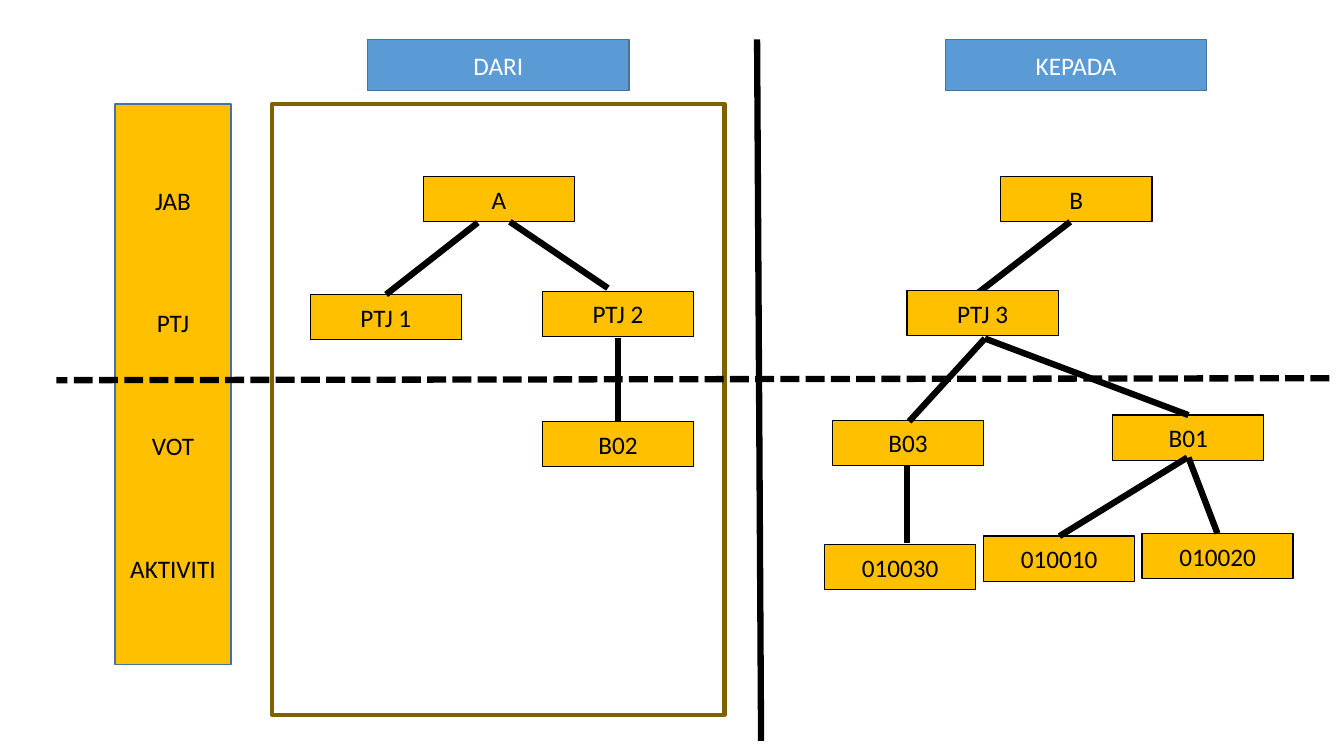
from typing import NamedTuple

from lxml import etree
from pptx import Presentation
from pptx.dml.color import RGBColor
from pptx.enum.dml import MSO_LINE
from pptx.enum.shapes import MSO_CONNECTOR, MSO_SHAPE
from pptx.enum.text import MSO_ANCHOR, PP_ALIGN
from pptx.oxml.ns import qn
from pptx.util import Cm, Pt

RECT = MSO_SHAPE.RECTANGLE
STRAIGHT = MSO_CONNECTOR.STRAIGHT
DASH = MSO_LINE.SQUARE_DOT
MIDDLE = MSO_ANCHOR.MIDDLE
CENTER = PP_ALIGN.CENTER

BLACK = RGBColor(0x00, 0x00, 0x00)
WHITE = RGBColor(0xFF, 0xFF, 0xFF)
GOLD = RGBColor(0xFF, 0xC0, 0x00)
BROWN = RGBColor(0x80, 0x60, 0x00)
BLUE = RGBColor(0x5B, 0x9B, 0xD5)
DARK_BLUE = RGBColor(0x43, 0x73, 0x9E)

FONT = "Calibri"
FONT_SIZE = Pt(18)
LEVEL_GAP = Pt(66)
NODE_W, NODE_H = 3.81, 1.14
HEADING_TOP, HEADING_W, HEADING_H = 0.99, 6.58, 1.3


class Style(NamedTuple):
    fill: RGBColor
    line: RGBColor
    text: RGBColor
    weight: float = 1


class Node(NamedTuple):
    text: str
    left: float
    top: float


class Link(NamedTuple):
    x1: float
    y1: float
    x2: float
    y2: float
    dashed: bool = False


LEVEL_STYLE = Style(GOLD, DARK_BLUE, BLACK)
FRAME_STYLE = Style(WHITE, BROWN, BLACK, 3)
HEADING_STYLE = Style(BLUE, DARK_BLUE, WHITE)
NODE_STYLE = Style(GOLD, BLACK, BLACK)

LEVELS = ["JAB", "PTJ", "VOT", "AKTIVITI"]
HEADINGS = [Node("DARI", 9.27, HEADING_TOP), Node("KEPADA", 23.83, HEADING_TOP)]
NODES = [
    Node("A", 10.67, 4.45),
    Node("PTJ 1", 7.82, 7.42),
    Node("PTJ 2", 13.67, 7.34),
    Node("B02", 13.67, 10.62),
    Node("B", 25.22, 4.45),
    Node("B03", 20.98, 10.59),
    Node("B01", 28.04, 10.46),
    Node("010030", 20.78, 13.72),
    Node("010010", 24.79, 13.51),
    Node("010020", 28.78, 13.44),
]
FRONT_NODE = Node("PTJ 3", 22.86, 7.32)

DIVIDER = Link(19.08, 0.99, 19.18, 18.67)
LINKS = [
    Link(12.04, 5.61, 9.73, 7.42),
    Link(12.85, 5.59, 15.32, 7.26),
    Link(15.57, 8.51, 15.57, 10.62),
    Link(29.92, 11.53, 26.7, 13.51),
    Link(29.95, 11.53, 30.68, 13.44),
    Link(22.86, 11.73, 22.86, 13.69),
    Link(33.5, 9.53, 1.42, 9.58, dashed=True),
    Link(26.97, 5.59, 24.66, 7.37),
    Link(24.82, 8.53, 29.95, 10.46),
    Link(24.82, 8.53, 22.91, 10.62),
]


def add_box(shapes, left: float, top: float, width: float, height: float,
            style: Style, lines: list[str]) -> None:
    sp = shapes.add_shape(RECT, Cm(left), Cm(top), Cm(width), Cm(height))
    sp.shadow.inherit = False
    sp.fill.solid()
    sp.fill.fore_color.rgb = style.fill
    sp.line.color.rgb = style.line
    sp.line.width = Pt(style.weight)
    tf = sp.text_frame
    tf.word_wrap = True
    tf.vertical_anchor = MIDDLE
    for i, line in enumerate(lines):
        p = tf.add_paragraph() if i else tf.paragraphs[0]
        p.alignment = CENTER
        p.space_before = LEVEL_GAP if i else Pt(0)
        r = p.add_run()
        r.text = line
        r.font.name = FONT
        r.font.size = FONT_SIZE
        r.font.color.rgb = style.text


def add_node(shapes, node: Node) -> None:
    add_box(shapes, node.left, node.top, NODE_W, NODE_H, NODE_STYLE, [node.text])


def add_link(shapes, link: Link) -> None:
    cxn = shapes.add_connector(STRAIGHT, Cm(link.x1), Cm(link.y1),
                               Cm(link.x2), Cm(link.y2))
    cxn.line.color.rgb = BLACK
    cxn.line.width = Pt(4.5)
    if link.dashed:
        cxn.line.dash_style = DASH
    etree.SubElement(cxn._element.spPr, qn("a:effectLst"))


def main() -> None:
    prs = Presentation()
    prs.slide_width, prs.slide_height = Cm(33.87), Cm(19.05)
    shapes = prs.slides.add_slide(prs.slide_layouts[6]).shapes

    add_box(shapes, 2.9, 2.62, 2.92, 14.12, LEVEL_STYLE, LEVELS)
    add_link(shapes, DIVIDER)
    add_box(shapes, 6.86, 2.62, 11.4, 15.39, FRAME_STYLE, [])
    for heading in HEADINGS:
        add_box(shapes, heading.left, heading.top, HEADING_W, HEADING_H,
                HEADING_STYLE, [heading.text])
    for node in NODES:
        add_node(shapes, node)
    for link in LINKS:
        add_link(shapes, link)
    add_node(shapes, FRONT_NODE)

    prs.save("out.pptx")


if __name__ == "__main__":
    main()
